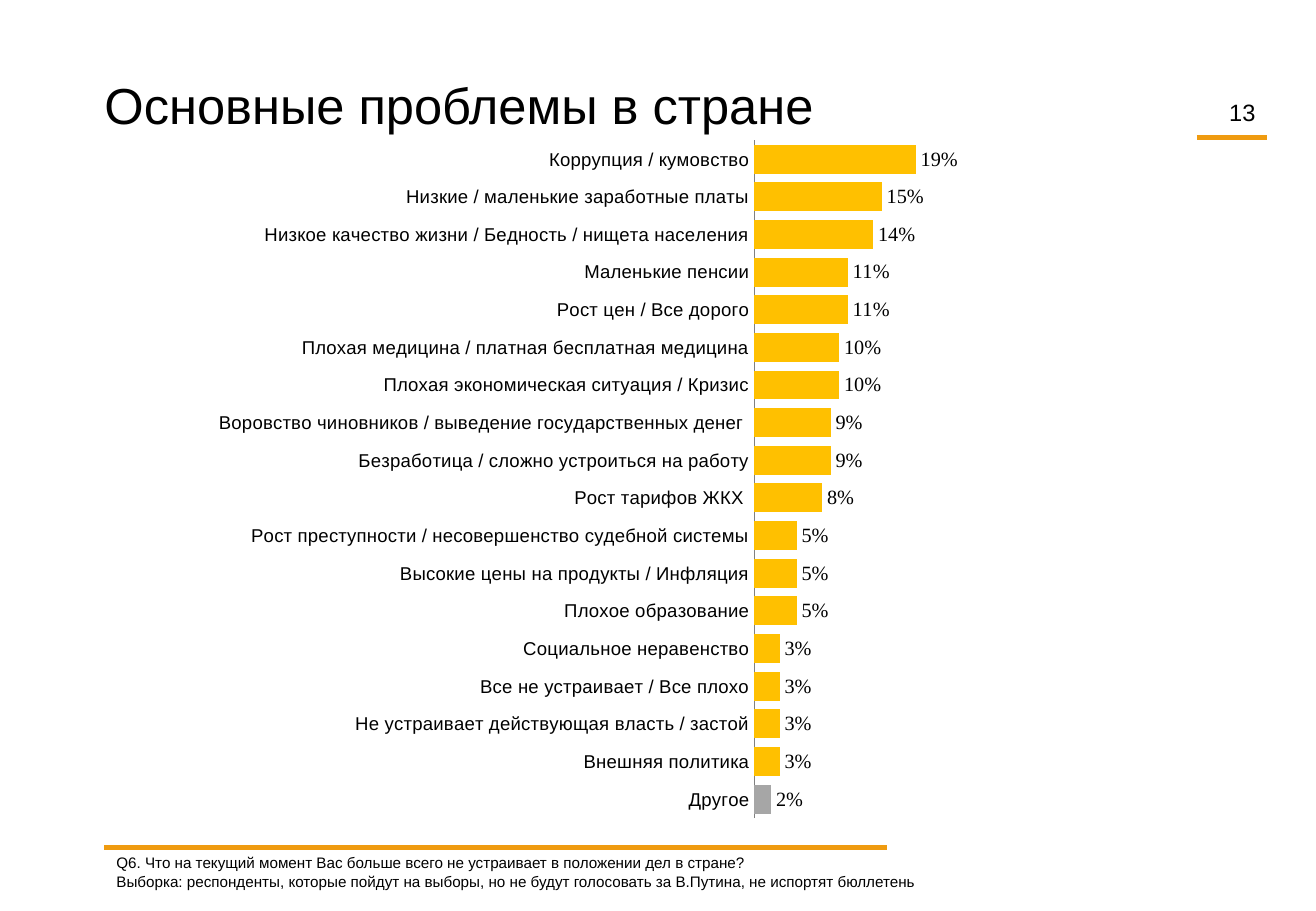
from dataclasses import dataclass

from lxml import etree
from pptx import Presentation
from pptx.chart.data import CategoryChartData
from pptx.dml.color import RGBColor
from pptx.enum.chart import XL_CHART_TYPE, XL_LABEL_POSITION, XL_TICK_MARK
from pptx.enum.shapes import MSO_CONNECTOR
from pptx.enum.text import MSO_ANCHOR, PP_ALIGN
from pptx.oxml.ns import qn
from pptx.util import Inches, Pt

BAR = XL_CHART_TYPE.BAR_CLUSTERED
OUTSIDE = XL_LABEL_POSITION.OUTSIDE_END
NO_TICK = XL_TICK_MARK.NONE
STRAIGHT = MSO_CONNECTOR.STRAIGHT
TOP, MIDDLE = MSO_ANCHOR.TOP, MSO_ANCHOR.MIDDLE
LEFT, RIGHT = PP_ALIGN.LEFT, PP_ALIGN.RIGHT


@dataclass(frozen=True)
class Theme:
    ink: RGBColor = RGBColor(0, 0, 0)
    rule: RGBColor = RGBColor(0xEF, 0x9B, 0x10)
    bar: RGBColor = RGBColor(0xFF, 0xC0, 0x00)
    other: RGBColor = RGBColor(0xA6, 0xA6, 0xA6)
    axis: RGBColor = RGBColor(0x80, 0x80, 0x80)
    sans: str = "Arial"
    serif: str = "Times New Roman"
    title: int = 30
    page: int = 14
    value: int = 12
    label: int = 11
    note: int = 9


THEME = Theme()
PERCENT = "#,##0%"

ISSUES = [
    ("Коррупция / кумовство", 0.19),
    ("Низкие / маленькие заработные платы", 0.15),
    ("Низкое качество жизни / Бедность / нищета населения", 0.14),
    ("Маленькие пенсии", 0.11),
    ("Рост цен / Все дорого", 0.11),
    ("Плохая медицина / платная бесплатная медицина", 0.10),
    ("Плохая экономическая ситуация / Кризис", 0.10),
    ("Воровство чиновников / выведение государственных денег ", 0.09),
    ("Безработица / сложно устроиться на работу", 0.09),
    ("Рост тарифов ЖКХ ", 0.08),
    ("Рост преступности / несовершенство судебной системы", 0.05),
    ("Высокие цены на продукты / Инфляция", 0.05),
    ("Плохое образование", 0.05),
    ("Социальное неравенство", 0.03),
    ("Все не устраивает / Все плохо", 0.03),
    ("Не устраивает действующая власть / застой", 0.03),
    ("Внешняя политика", 0.03),
    ("Другое", 0.02),
]
NOTES = [
    "Q6. Что на текущий момент Вас больше всего не устраивает в положении дел в стране?",
    "Выборка: респонденты, которые пойдут на выборы, но не будут голосовать "
    "за В.Путина, не испортят бюллетень",
]


def style(font, size, name=THEME.sans):
    font.size = Pt(size)
    font.name = name
    font.color.rgb = THEME.ink


def add_text(slide, box, lines, size, align=LEFT, anchor=TOP, inset=0.1):
    frame = slide.shapes.add_textbox(*map(Inches, box)).text_frame
    frame.word_wrap = True
    frame.vertical_anchor = anchor
    frame.margin_left = frame.margin_right = Inches(inset)
    frame.text = "\n".join(lines)
    for para in frame.paragraphs:
        para.alignment = align
        for run in para.runs:
            style(run.font, size)


def add_rule(slide, left, top, width):
    ends = map(Inches, (left, top, left + width, top))
    rule = slide.shapes.add_connector(STRAIGHT, *ends)
    rule.line.color.rgb = THEME.rule
    rule.line.width = Pt(3)
    etree.SubElement(rule._element.spPr, qn("a:effectLst"))


def add_title(slide, box):
    add_text(slide, box, ["Основные проблемы в стране"], THEME.title,
             anchor=MIDDLE, inset=0)


def add_page(slide, box):
    left, top, width, height = box
    add_text(slide, box, ["13"], THEME.page, RIGHT, MIDDLE)
    add_rule(slide, left, top + height + 0.06, width)


def add_footer(slide, box):
    left, top = box[:2]
    add_rule(slide, left, top, 6.44)
    add_text(slide, box, NOTES, THEME.note)


def fix_plot(chart, left, top, width, height):
    """Pin the inner plot area to fractions of the chart."""
    area = chart._chartSpace.chart.plotArea
    for old in area.findall(qn("c:layout")):
        area.remove(old)
    layout = etree.Element(qn("c:layout"))
    manual = etree.SubElement(layout, qn("c:manualLayout"))
    parts = [("layoutTarget", "inner"), ("xMode", "edge"), ("yMode", "edge"),
             ("x", left), ("y", top), ("w", width), ("h", height)]
    for tag, val in parts:
        etree.SubElement(manual, qn("c:" + tag)).set("val", str(val))
    area.insert(0, layout)


def add_bars(slide, box):
    data = CategoryChartData(number_format=PERCENT)
    names, shares = zip(*ISSUES)
    data.categories = names
    data.add_series("Series 1", shares)
    chart = slide.shapes.add_chart(BAR, *map(Inches, box), data).chart
    style(chart.font, THEME.value, THEME.serif)
    chart.has_legend = chart.has_title = False
    fix_plot(chart, 0.56, 0, 0.44, 1)

    cats = chart.category_axis
    cats.reverse_order = True
    cats.major_tick_mark = cats.minor_tick_mark = NO_TICK
    cats.format.line.color.rgb = THEME.axis
    cats.format.line.width = Pt(0.75)
    style(cats.tick_labels.font, THEME.label)

    scale = chart.value_axis
    scale.minimum_scale, scale.maximum_scale = 0, 0.6
    scale.has_major_gridlines = scale.visible = False

    plot = chart.plots[0]
    plot.gap_width = 30
    plot.vary_by_categories = False
    bars = plot.series[0]
    bars.invert_if_negative = False
    for part, color in ((bars, THEME.bar),
                        (bars.points[len(ISSUES) - 1], THEME.other)):
        part.format.fill.solid()
        part.format.fill.fore_color.rgb = color

    labels = bars.data_labels
    labels.show_value = True
    labels.position = OUTSIDE
    labels.number_format = PERCENT
    labels.number_format_is_linked = False
    style(labels.font, THEME.value, THEME.serif)


def main():
    deck = Presentation()
    deck.slide_width, deck.slide_height = Inches(10.83), Inches(7.5)
    slide = deck.slides.add_slide(deck.slide_layouts[6])
    add_bars(slide, (0.86, 1.15, 9.55, 5.59))
    add_title(slide, (0.86, 0.55, 8.98, 0.61))
    add_page(slide, (9.85, 0.78, 0.58, 0.29))
    add_footer(slide, (0.86, 6.98, 9.6, 0.4))
    deck.save("out.pptx")


if __name__ == "__main__":
    main()
